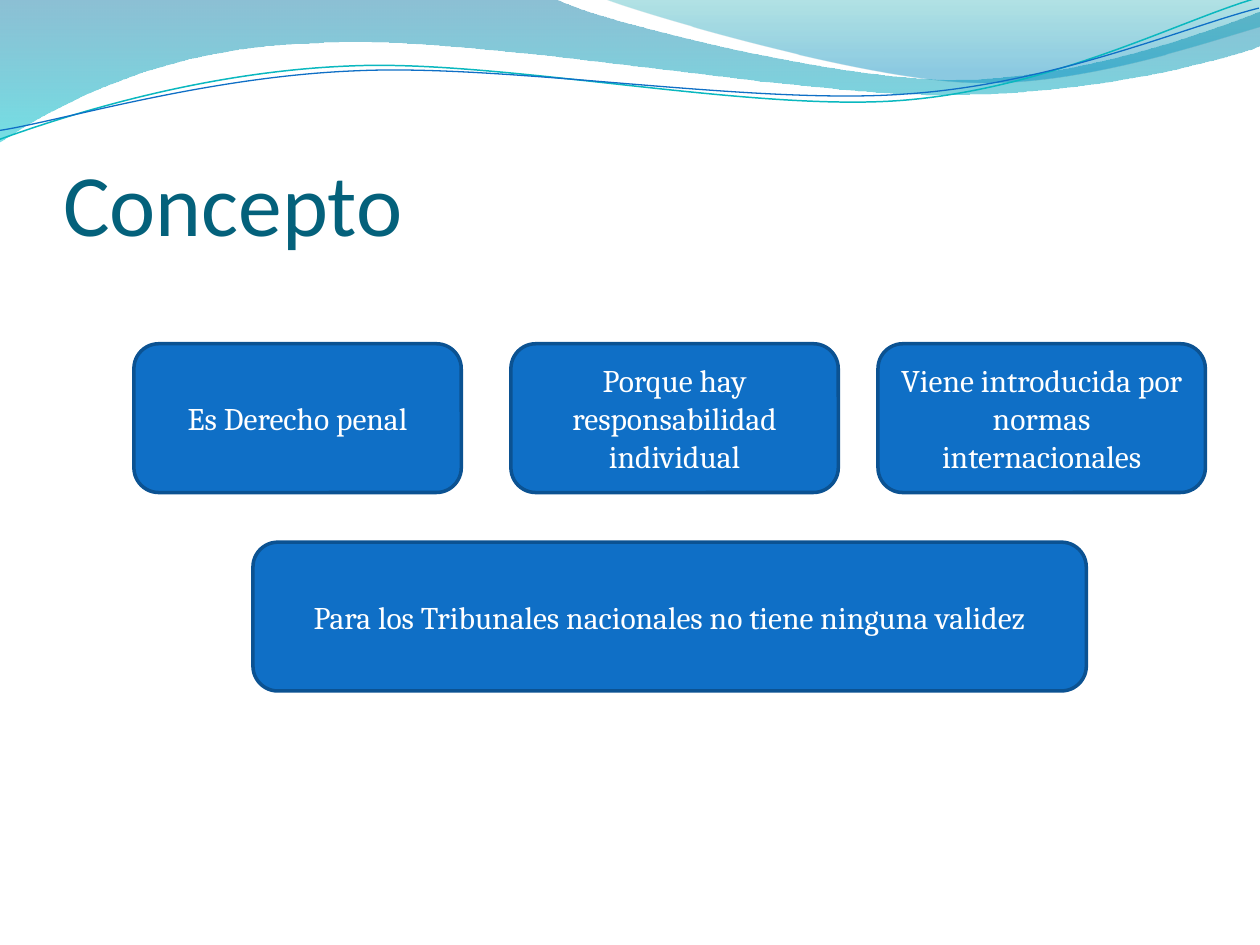
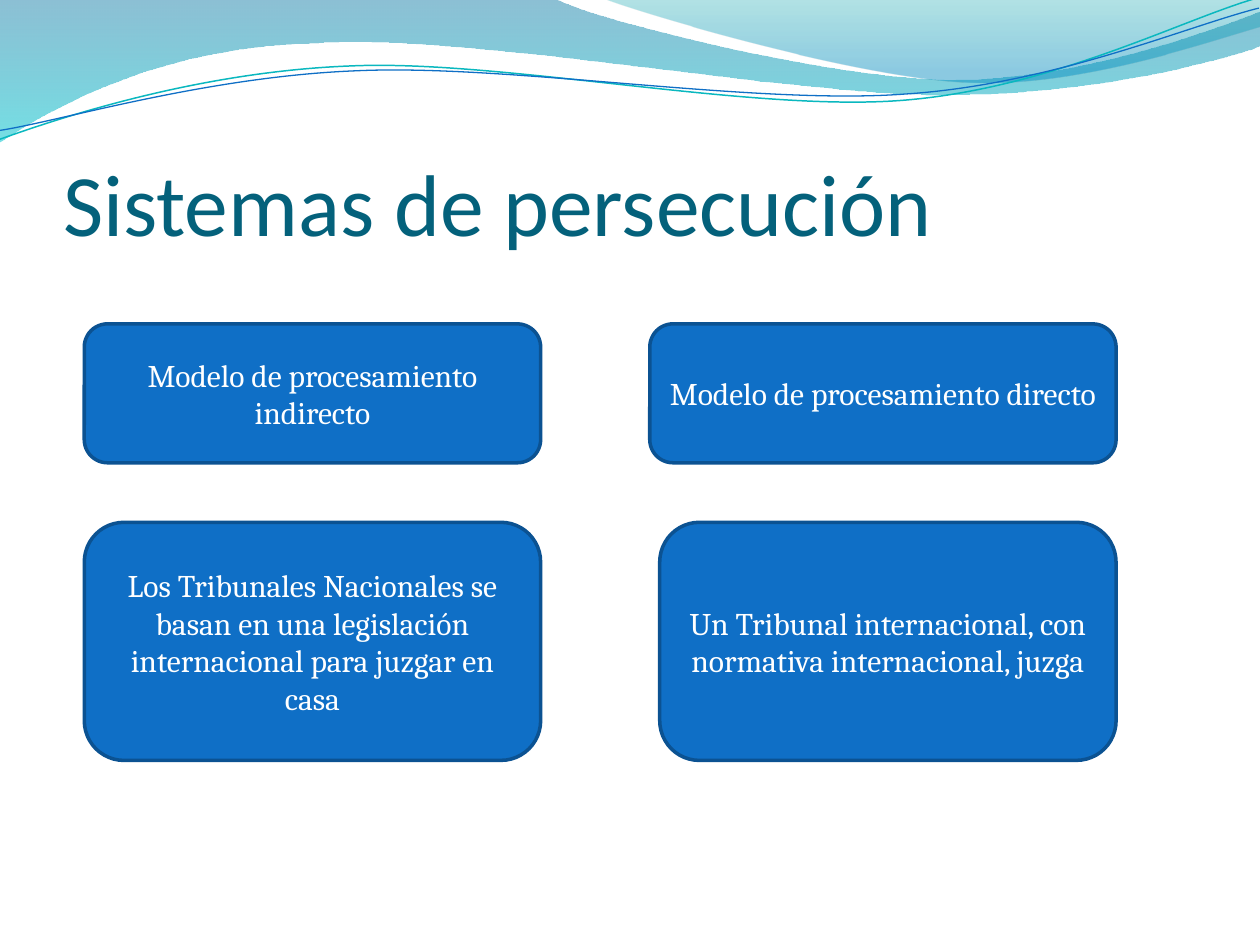
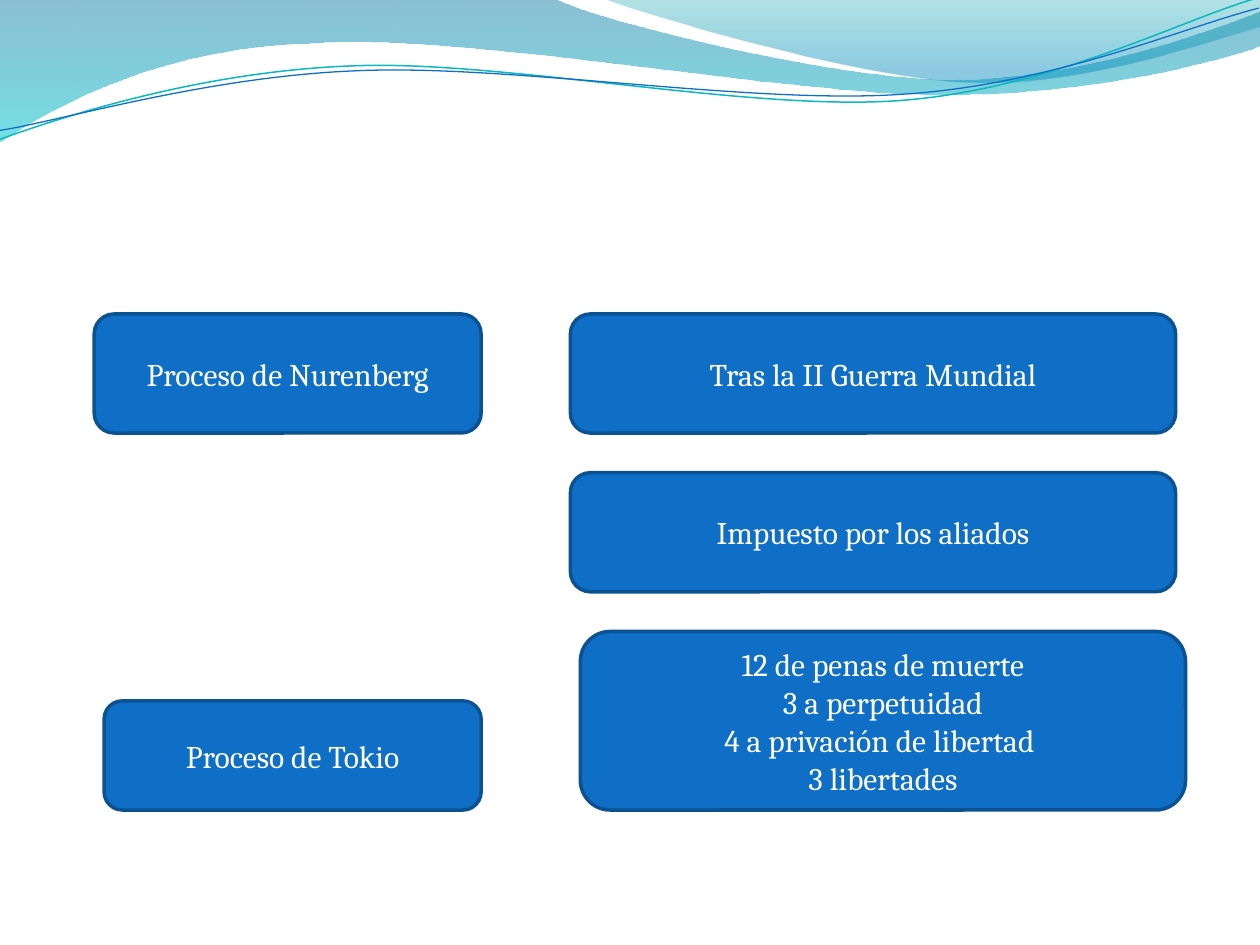
from lxml import etree
from pptx import Presentation
from pptx.dml.color import RGBColor
from pptx.enum.shapes import MSO_SHAPE
from pptx.enum.text import MSO_ANCHOR, MSO_AUTO_SIZE, PP_ALIGN
from pptx.oxml.ns import qn
from pptx.util import Inches, Mm, Pt

ROUNDED = MSO_SHAPE.ROUNDED_RECTANGLE
LEFT, CENTER = PP_ALIGN.LEFT, PP_ALIGN.CENTER
MIDDLE, BOTTOM = MSO_ANCHOR.MIDDLE, MSO_ANCHOR.BOTTOM
TITLE_ONLY, BLANK = 5, 6
color = RGBColor.from_string

# Shared style
TITLE_COLOR, CARD_FILL, CARD_LINE, CARD_TEXT = "04617B", "0F6FC6", "0B5292", "FFFFFF"
TITLE_FONT, BODY_FONT = "Calibri", "Cambria"

# Cards sit on a 2 mm grid
CELL, GRID_LEFT, GRID_TOP = Mm(2), Mm(1), Mm(1.3)

# Header waves, in inches: a pair is a straight step, six numbers are a Bezier curve
BANDS = [
    ([(0, 0), (4.4, -0.01),
      (4.76, 0.17, 6.64, 0.63, 7.58, 0.63), (8.53, 0.63, 9.58, 0.26, 10, 0.09),
      (10.01, 0.36),
      (9.83, 0.44, 8.7, 0.76, 7.46, 0.75), (6.22, 0.75, 3.82, 0.28, 2.57, 0.34),
      (1.29, 0.36, 0.46, 0.83, -0.01, 1.13), (0, 0)],
     [(0, "0074A1", 45), (1, "00C6CF", 55)]),
    ([(4.79, -0.01),
      (5.09, 0.11, 6.82, 0.62, 7.69, 0.65), (8.56, 0.69, 9.61, 0.32, 10, 0.21),
      (10, 0), (4.79, -0.01)],
     [(0, "00A1A9", 30), (0.8, "008BBF", 45)]),
]
# Strands are given level and then tilted
STRAND_TILT = -2.7
STRANDS = [
    ([(-0.02, 0.87), (0.47, 0.72, 1.58, 0.41, 2.78, 0.42),
      (3.96, 0.42, 5.91, 0.93, 7.12, 0.9), (8.32, 0.87, 9.4, 0.36, 10, 0.22)],
     "0AB8BF", 0.85),
    ([(-0.02, 0.8), (0.46, 0.75, 1.64, 0.45, 2.83, 0.46),
      (4.03, 0.46, 5.96, 0.88, 7.16, 0.85), (8.35, 0.83, 9.42, 0.42, 10.01, 0.3)],
     "0F6FC6", 0.75),
]

# Slides: title, then cards as (column, row, columns wide, rows high, text)
SLIDES = [
    ("Concepto", [
        (13, 34, 33, 15, "Es Derecho penal"),
        (51, 34, 33, 15, "Porque hay responsabilidad individual"),
        (88, 34, 33, 15, "Viene introducida por normas internacionales"),
        (25, 54, 84, 15, "Para los Tribunales nacionales no tiene ninguna validez"),
    ]),
    ("Sistemas de persecución", [
        (8, 32, 46, 14, "Modelo de procesamiento indirecto"),
        (65, 32, 47, 14, "Modelo de procesamiento directo"),
        (8, 52, 46, 24, "Los Tribunales Nacionales se basan en una legislación "
                        "internacional para juzgar en casa"),
        (66, 52, 46, 24, "Un Tribunal internacional, con normativa internacional, juzga"),
    ]),
    (None, [
        (9, 31, 39, 12, "Proceso de Nurenberg"),
        (57, 31, 61, 12, "Tras la II Guerra Mundial"),
        (57, 47, 61, 12, "Impuesto por los aliados"),
        (58, 63, 61, 18, "12 de penas de muerte\n3 a perpetuidad\n"
                         "4 a privación de libertad \n3 libertades"),
        (10, 70, 38, 11, "Proceso de Tokio"),
    ]),
]


def write(frame, text, *, size, font, hex_color, align, anchor):
    frame.text = text
    frame.word_wrap = True
    frame.auto_size = MSO_AUTO_SIZE.NONE
    frame.vertical_anchor = anchor
    for paragraph in frame.paragraphs:
        paragraph.alignment = align
        for run in paragraph.runs:
            run.font.size = Pt(size)
            run.font.name = font
            run.font.color.rgb = color(hex_color)


def draw_wave(shapes, steps, closed):
    corners = [(Inches(step[i]), Inches(step[i + 1]))
               for step in steps for i in range(0, len(step), 2)]
    builder = shapes.build_freeform(*corners[0])
    builder.add_line_segments(corners[1:], close=closed)
    wave = builder.convert_to_shape()
    wave.shadow.inherit = False
    # Join the three points of each curved step into one Bezier segment
    segments = iter(list(wave.element.iter(qn("a:lnTo"))))
    for step in steps[1:]:
        segment = next(segments)
        if len(step) == 6:
            segment.addprevious(curve := etree.Element(qn("a:cubicBezTo")))
            for part in (segment, next(segments), next(segments)):
                curve.append(part[0])
                part.getparent().remove(part)
    return wave


prs = Presentation()
prs.slide_width, prs.slide_height = Inches(10), Inches(7.5)
waves = []

for title_text, cards in SLIDES:
    slide = prs.slides.add_slide(prs.slide_layouts[TITLE_ONLY if title_text else BLANK])

    # Title
    if title_text:
        title = slide.shapes.title
        title.left, title.top = Inches(0.5), Inches(0.77)
        title.width, title.height = Inches(9.08), Inches(1.25)
        frame = title.text_frame
        frame.margin_left = frame.margin_right = frame.margin_bottom = 0
        frame.margin_top = Inches(0.05)
        write(frame, title_text, size=50, font=TITLE_FONT, hex_color=TITLE_COLOR,
              align=LEFT, anchor=BOTTOM)

    # Header waves: drawn once, then moved to the master for every slide
    if not waves:
        for steps, stops in BANDS:
            band = draw_wave(slide.shapes, steps, True)
            band.line.fill.background()
            band.fill.gradient()
            band.fill.gradient_angle = 270
            for stop, (position, hex_color, _) in zip(band.fill.gradient_stops, stops):
                stop.position = position
                stop.color.rgb = color(hex_color)
            for tint, (_, _, opacity) in zip(band.element.iter(qn("a:srgbClr")), stops):
                etree.SubElement(tint, qn("a:alpha")).set("val", str(opacity * 1000))
            waves.append(band)
        for steps, hex_color, width in STRANDS:
            strand = draw_wave(slide.shapes, steps, False)
            strand.rotation = STRAND_TILT
            strand.fill.background()
            strand.line.color.rgb = color(hex_color)
            strand.line.width = Pt(width)
            waves.append(strand)
        master_tree = prs.slide_master.shapes.element
        for order, wave in enumerate(waves):
            wave.element.nvSpPr.cNvPr.set("id", str(101 + order))
            master_tree.insert(2 + order, wave.element)

    # Cards
    for column, row, columns, rows, text in cards:
        card = slide.shapes.add_shape(ROUNDED, GRID_LEFT + column * CELL,
                                      GRID_TOP + row * CELL, columns * CELL, rows * CELL)
        card.shadow.inherit = False
        card.fill.solid()
        card.fill.fore_color.rgb = color(CARD_FILL)
        card.line.color.rgb = color(CARD_LINE)
        card.line.width = Pt(2)
        write(card.text_frame, text, size=18, font=BODY_FONT, hex_color=CARD_TEXT,
              align=CENTER, anchor=MIDDLE)

prs.save("out.pptx")
